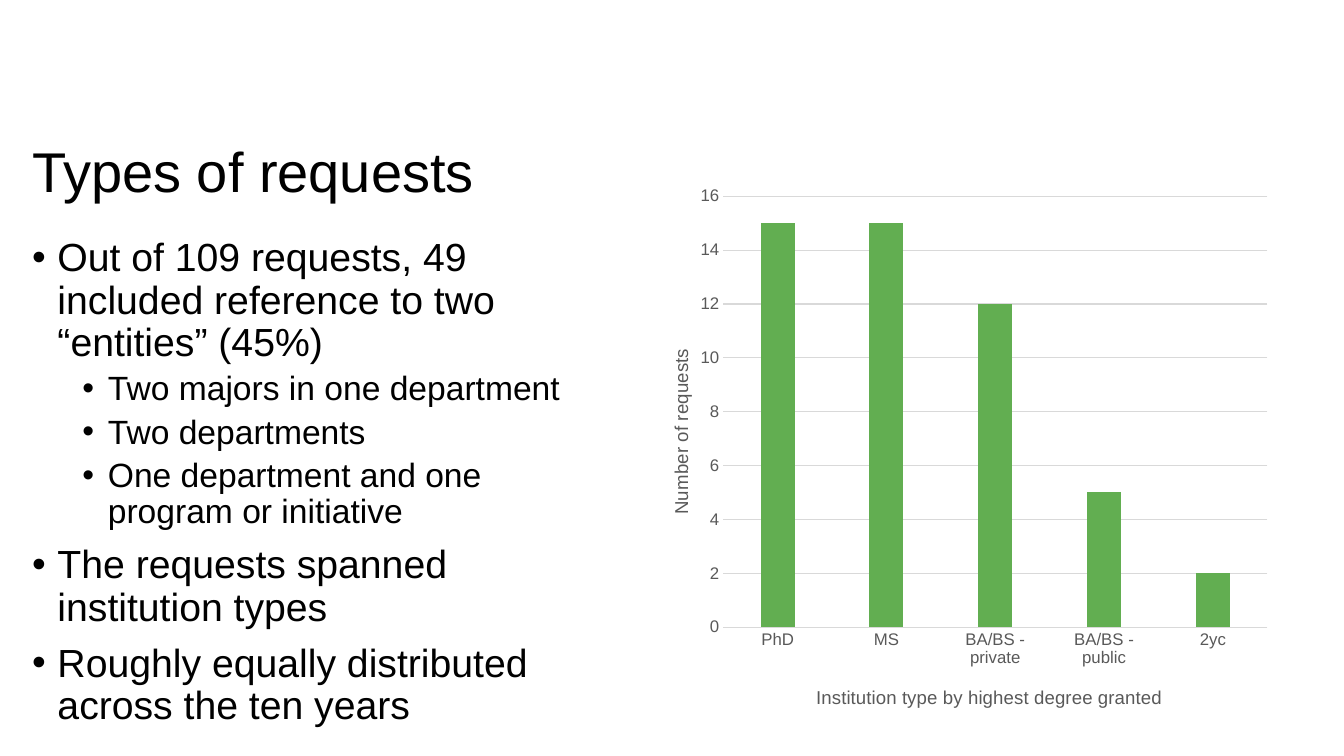
from dataclasses import dataclass

import pptx
import pptx.chart.data
import pptx.dml.color
import pptx.enum.chart
import pptx.enum.text
import pptx.oxml
import pptx.oxml.ns
import pptx.util
from lxml import etree

Cm = pptx.util.Cm
Pt = pptx.util.Pt
RGB = pptx.dml.color.RGBColor.from_string
qn = pptx.oxml.ns.qn


@dataclass(frozen=True)
class Theme:
    font: str = "Arial"
    text: str = "000000"
    label: str = "595959"
    grid: str = "D9D9D9"
    bar: str = "62AE51"
    title_size: float = 40
    body_sizes: tuple = (28, 24)
    axis_title_size: float = 13.3
    tick_size: float = 12


theme = Theme()


def add_text(tf, text, size, color=theme.text, level=None, before=0, spacing=None):
    """Fill the frame's empty first paragraph or append one; a level makes it a bullet."""
    p = tf.paragraphs[0]
    if p.runs:
        p = tf.add_paragraph()
        p.space_before = Pt(before)
    if spacing:
        p.line_spacing = spacing
    if level is not None:
        p.level = level
        pPr = p._p.get_or_add_pPr()
        pPr.set("marL", str(Cm(0.64 + 1.27 * level)))
        pPr.set("indent", str(-Cm(0.64)))
        bullet_font = etree.SubElement(pPr, qn("a:buFont"))
        bullet_font.set("typeface", theme.font)
        etree.SubElement(pPr, qn("a:buChar")).set("char", "•")
    r = p.add_run()
    r.text = text
    r.font.name = theme.font
    r.font.size = Pt(size)
    r.font.bold = False
    r.font.color.rgb = RGB(color)


def set_layout(element, index, inner=False, **place):
    """Place a chart part by fractions of the chart's width and height."""
    for old in element.findall(qn("c:layout")):
        element.remove(old)
    layout = etree.Element(qn("c:layout"))
    manual = etree.SubElement(layout, qn("c:manualLayout"))
    if inner:
        etree.SubElement(manual, qn("c:layoutTarget")).set("val", "inner")
    for key in ("x", "y"):
        etree.SubElement(manual, qn(f"c:{key}Mode")).set("val", "edge")
    for key, value in place.items():
        etree.SubElement(manual, qn(f"c:{key}")).set("val", str(value))
    element.insert(index, layout)


prs = pptx.Presentation()
prs.slide_width = Cm(33.87)
prs.slide_height = Cm(19.05)
s = prs.slides.add_slide(prs.slide_layouts[6])

# Title and bullets
title = s.shapes.add_textbox(Cm(0.56), Cm(2.9), Cm(32.77), Cm(2.97))
body = s.shapes.add_textbox(Cm(0.56), Cm(5.87), Cm(14.53), Cm(12.93))
for sp in (title, body):
    sp.text_frame.word_wrap = True
title.text_frame.vertical_anchor = pptx.enum.text.MSO_ANCHOR.MIDDLE
add_text(title.text_frame, "Types of requests", theme.title_size, spacing=0.9)

bullets = [
    (0, "Out of 109 requests, 49 included reference to two “entities” (45%)"),
    (1, "Two majors in one department"),
    (1, "Two departments"),
    (1, "One department and one program or initiative"),
    (0, "The requests spanned institution types"),
    (0, "Roughly equally distributed across the ten years"),
]
for level, text in bullets:
    add_text(body.text_frame, text, theme.body_sizes[level], level=level,
             before=(10, 5)[level], spacing=0.9)

# Requests by institution type
data = pptx.chart.data.CategoryChartData()
data.categories = ["PhD", "MS", "BA/BS - private", "BA/BS - public", "2yc"]
data.add_series("Series 1", (15, 15, 12, 5, 2))
chart = s.shapes.add_chart(
    pptx.enum.chart.XL_CHART_TYPE.COLUMN_CLUSTERED,
    Cm(16.13), Cm(4.39), Cm(16.13), Cm(13.92), data).chart
chart.has_legend = False
chart.has_title = False
chart.font.name = theme.font
chart.font.size = Pt(theme.tick_size)
chart.font.color.rgb = RGB(theme.label)

plot = chart.plots[0]
plot.vary_by_categories = False
plot.gap_width = 219
plot.overlap = -27
fill = plot.series[0].format.fill
fill.solid()
fill.fore_color.rgb = RGB(theme.bar)

axes = [
    (chart.category_axis, "Institution type by highest degree granted", 0.27, 0.92),
    (chart.value_axis, "Number of requests", 0.04, 0.31),
]
for axis, text, x, y in axes:
    axis.major_tick_mark = pptx.enum.chart.XL_TICK_MARK.NONE
    axis.minor_tick_mark = pptx.enum.chart.XL_TICK_MARK.NONE
    axis.tick_labels.font.name = theme.font
    axis.tick_labels.font.size = Pt(theme.tick_size)
    axis.tick_labels.font.color.rgb = RGB(theme.label)
    add_text(axis.axis_title.text_frame, text, theme.axis_title_size, theme.label)
    set_layout(axis.axis_title._element, 1, x=x, y=y)

value_axis = chart.value_axis
value_axis.minimum_scale = 0
value_axis.maximum_scale = 16
value_axis.major_unit = 2
value_axis.format.line.fill.background()
value_axis.has_major_gridlines = True
for line in (chart.category_axis.format.line, value_axis.major_gridlines.format.line):
    line.color.rgb = RGB(theme.grid)
    line.width = Pt(0.75)
turn = value_axis.axis_title._element.find(".//" + qn("a:bodyPr"))
turn.set("rot", "-5400000")
turn.set("vert", "horz")
plot_area = chart._chartSpace.find(".//" + qn("c:plotArea"))
set_layout(plot_area, 0, inner=True, x=0.13, y=0.04, w=0.85, h=0.78)

prs.save("out.pptx")
